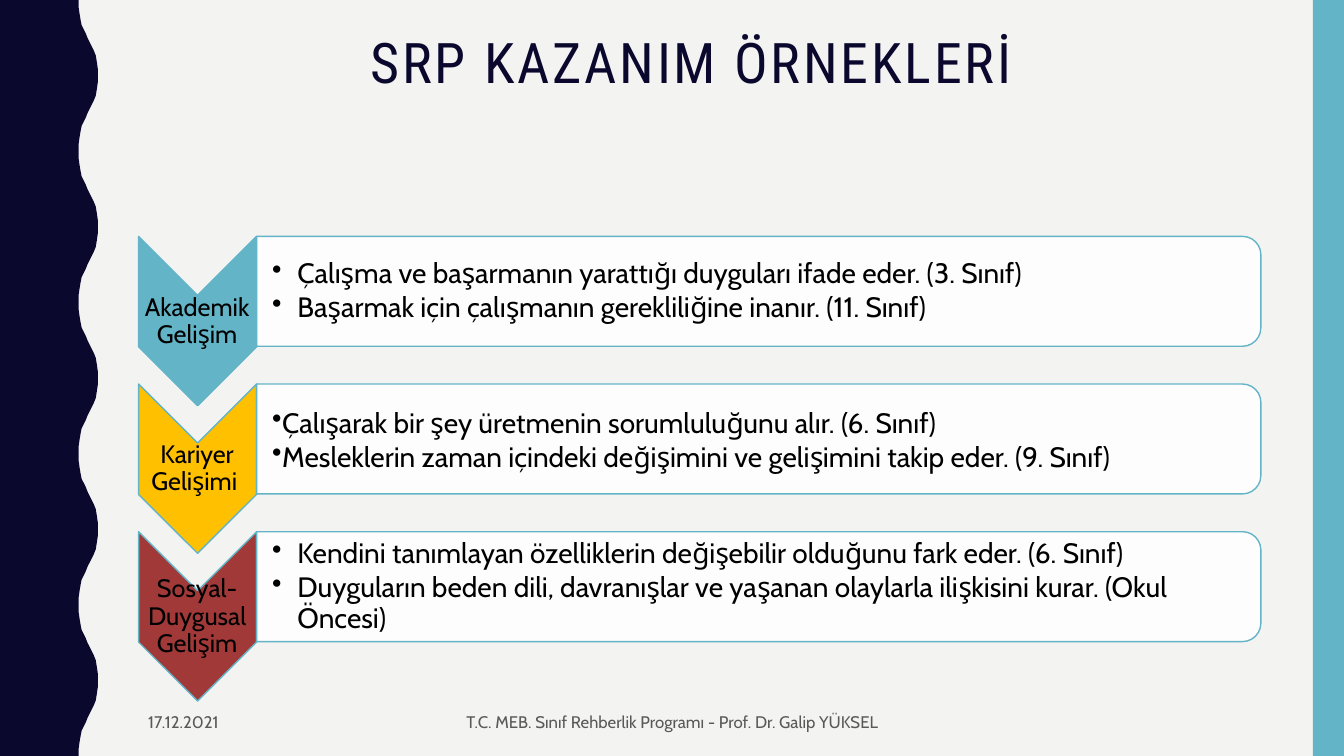
"""Build the slide of guidance programme outcome examples."""
from pptx import Presentation
from pptx.dml.color import RGBColor
from pptx.enum import shapes, text
from pptx.oxml import ns
from pptx.util import Inches, Pt
from lxml import etree

TITLE = "SRP KAZANIM ÖRNEKLERİ "
AREAS = [
    ("Akademik Gelişim", "62B4C6", True, [
        "Çalışma ve başarmanın yarattığı duyguları ifade eder. (3. Sınıf)",
        "Başarmak için çalışmanın gerekliliğine inanır. (11. Sınıf)"]),
    ("Kariyer Gelişimi ", "FFC000", False, [
        "Çalışarak bir şey üretmenin sorumluluğunu alır. (6. Sınıf)",
        "Mesleklerin zaman içindeki değişimini ve gelişimini takip eder. (9. Sınıf)"]),
    ("Sosyal-Duygusal Gelişim", "A23939", True, [
        "Kendini tanımlayan özelliklerin değişebilir olduğunu fark eder. (6. Sınıf)",
        "Duyguların beden dili, davranışlar ve yaşanan olaylarla ilişkisini kurar. (Okul Öncesi)"]),
]
FOOTERS = [
    ("17.12.2021", 1.37, 2.55, text.PP_ALIGN.LEFT),
    ("T.C. MEB. Sınıf Rehberlik Programı - Prof. Dr. Galip YÜKSEL", 4.42, 4.5,
     text.PP_ALIGN.CENTER),
]
NAVY, TEAL, GREY, BLACK = "0B082E", "62B4C6", "595959", "000000"
WIDTH, HEIGHT = 13.33, 7.5
WAVE_PERIOD = 1.5
HALF_WAVE = [(0.78, 0), (0.78, 0.07), (0.79, 0.14), (0.8, 0.2), (0.81, 0.25),
             (0.83, 0.29), (0.85, 0.33), (0.87, 0.38), (0.89, 0.42), (0.91, 0.46),
             (0.93, 0.5), (0.95, 0.55), (0.96, 0.61), (0.97, 0.68), (0.97, 0.75)]
ROW_PITCH = 2.93 / 2


def rgb(value):
    return RGBColor.from_string(value)


def box(left, top, width, height):
    return [Inches(v) for v in (left, top, width, height)]


def paint(shape, fill, line=None):
    shape.shadow.inherit = False
    shape.fill.solid()
    shape.fill.fore_color.rgb = rgb(fill)
    if line:
        shape.line.color.rgb = rgb(line)
        shape.line.width = Pt(1)
    else:
        shape.line.fill.background()


def add_run(paragraph, words, size, color, font="Cabin"):
    run = paragraph.add_run()
    run.text = words
    run.font.size, run.font.name = Pt(size), font
    run.font.color.rgb = rgb(color)
    return run


def add_frame(place, insets=None):
    frame = slide.shapes.add_textbox(*place).text_frame
    frame.word_wrap = True
    frame.vertical_anchor = text.MSO_ANCHOR.MIDDLE
    if insets:
        (frame.margin_left, frame.margin_top,
         frame.margin_right, frame.margin_bottom) = map(Inches, insets)
    return frame


def add_bullet(paragraph, indent):
    props = paragraph._p.get_or_add_pPr()
    props.set("marL", str(Inches(indent)))
    props.set("indent", str(-Inches(indent)))
    etree.SubElement(props, ns.qn("a:buChar")).set("char", "•")


def add_rotated(preset, place, fill):
    shape = slide.shapes.add_shape(preset, *place)
    shape.rotation = 90
    paint(shape, fill, TEAL)
    return shape


def add_area(top, label, color, hanging, outcomes):
    add_rotated(shapes.MSO_SHAPE.CHEVRON, box(1.12, top + 0.25, 1.68, 1.17), color)
    label_frame = add_frame(box(1.37, top + 0.59, 1.17, 0.5), [0.01] * 4)
    name = label_frame.paragraphs[0]
    name.alignment, name.line_spacing = text.PP_ALIGN.CENTER, 0.9
    add_run(name, label, 18, BLACK)

    panel = add_rotated(shapes.MSO_SHAPE.ROUND_2_SAME_RECTANGLE,
                        box(6.98, top - 4.44, 1.09, 9.96), "FFFFFF")
    panel_color = panel.element.spPr.find(ns.qn("a:solidFill"))[0]
    etree.SubElement(panel_color, ns.qn("a:alpha")).set("val", "90000")

    outcome_frame = add_frame(box(2.54, top + 0.05, 9.91, 0.98), (0.16, 0.01, 0.01, 0.01))
    for index, outcome in enumerate(outcomes):
        item = outcome_frame.add_paragraph() if index else outcome_frame.paragraphs[0]
        if hanging:
            item.line_spacing, item.space_after = 0.9, Pt(3)
        add_bullet(item, 0.25 if hanging else 0)
        add_run(item, outcome, 20, BLACK)


deck = Presentation()
deck.slide_width, deck.slide_height = Inches(WIDTH), Inches(HEIGHT)
slide = deck.slides.add_slide(deck.slide_layouts[5])
slide.background.fill.solid()
slide.background.fill.fore_color.rgb = rgb("F3F3F2")

full_wave = HALF_WAVE + [(x, WAVE_PERIOD - y) for x, y in HALF_WAVE[-2::-1]]
edge = [(x, y + WAVE_PERIOD * n) for n in range(5) for x, y in full_wave]
outline = slide.shapes.build_freeform(0, 0)
outline.add_line_segments([(Inches(x), Inches(y)) for x, y in edge + [(0, HEIGHT)]])
paint(outline.convert_to_shape(), NAVY)
stripe = slide.shapes.add_shape(shapes.MSO_SHAPE.RECTANGLE, *box(13.02, 0, 0.31, HEIGHT))
paint(stripe, TEAL)

title = slide.shapes.title
title.left, title.top, title.width, title.height = box(1.37, 0.3, 11.13, 1.34)
title.text_frame.vertical_anchor = text.MSO_ANCHOR.TOP
title.text_frame.auto_size = text.MSO_AUTO_SIZE.NONE
heading = title.text_frame.paragraphs[0]
heading.alignment, heading.line_spacing = text.PP_ALIGN.CENTER, 0.9
heading_run = add_run(heading, TITLE, 40, NAVY, "Roboto Condensed")
heading_run.font._element.set("spc", "200")

for row, area in enumerate(AREAS):
    add_area(2.35 + row * ROW_PITCH, *area)

for words, left, width, alignment in FOOTERS:
    footer = add_frame(box(left, 6.97, width, 0.38)).paragraphs[0]
    footer.alignment = alignment
    add_run(footer, words, 12, GREY)

deck.save("out.pptx")
